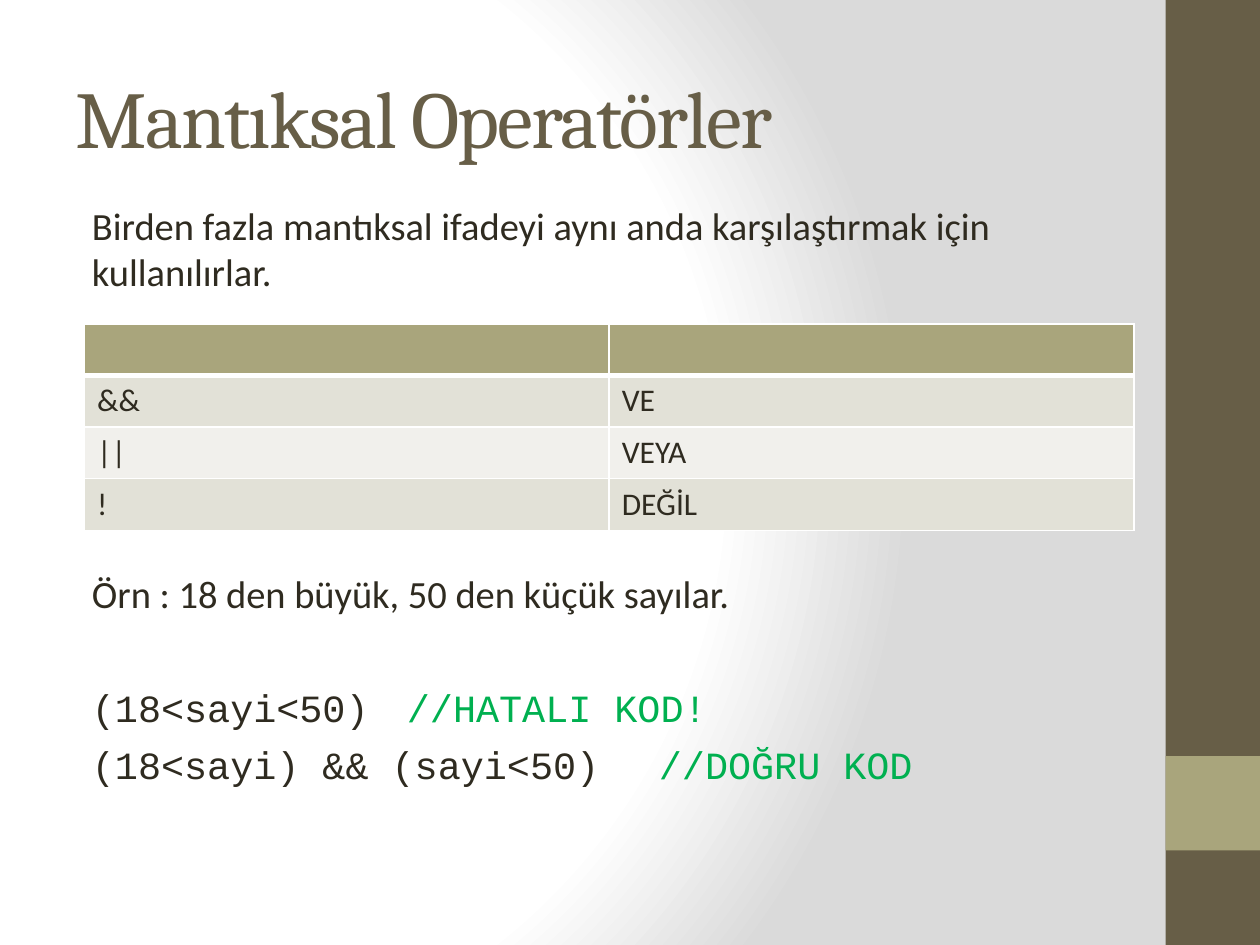
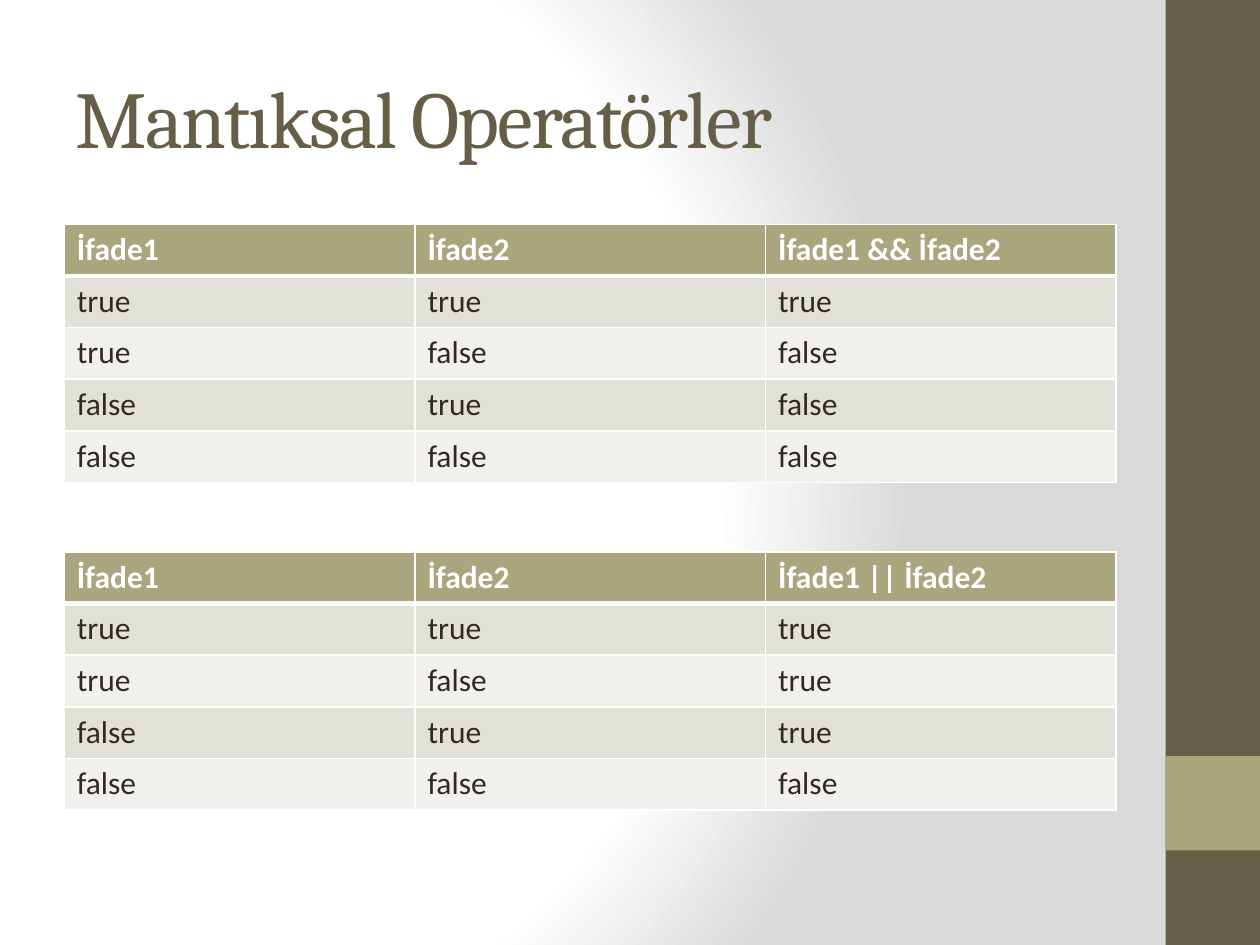
from pptx import Presentation
from pptx import util as u
from pptx.dml.color import RGBColor
from pptx.enum import shapes, text
from pptx.oxml import parse_xml
from pptx.oxml.ns import nsdecls, qn

COLORS = {
    "ink": "2F2B20", "brown": "675E47", "olive": "A9A57C", "white": "FFFFFF",
    "grey": "DADADA", "band_dark": "E2E1D7", "band_light": "F1F0EC", "comment": "00B050",
}
HEADING_FONT, BODY_FONT, CODE_FONT = "Cambria", "Calibri", "Courier New"
TITLE_ONLY, TITLE_AND_BODY = 5, 1
TITLE = "Mantıksal Operatörler"
TITLE_BOX = (0.5, 0.3, 8.33, 1.25)
BODY_BOX = (0.51, 1.55, 8.33, 5.43)
ROW_HEIGHT = 0.41

OPERATORS = [("", ""), ("&&", "VE"), ("||", "VEYA"), ("!", "DEĞİL")]
TRUTH_PAIRS = [(True, True), (True, False), (False, True), (False, False)]


def rgb(name):
    return RGBColor.from_string(COLORS[name])


def inches(box):
    return [u.Inches(length) for length in box]


def set_font(font, name, size, color, bold=False):
    font.name, font.size, font.bold = name, u.Pt(size), bold
    font.color.rgb = rgb(color)


def set_background(master):
    """Give the master a radial gradient from white to grey."""
    stops = "".join(
        f'<a:gs pos="{pos * 1000}"><a:srgbClr val="{COLORS[name]}"/></a:gs>'
        for pos, name in [(0, "white"), (75, "white"), (100, "grey")])
    background = parse_xml(
        f'<p:bg {nsdecls("p", "a")}><p:bgPr><a:gradFill rotWithShape="1">'
        f'<a:gsLst>{stops}</a:gsLst><a:path path="circle">'
        '<a:fillToRect l="20000" t="50000" r="100000" b="50000"/></a:path>'
        '</a:gradFill><a:effectLst/></p:bgPr></p:bg>')
    content = master.element.find(qn("p:cSld"))
    previous = content.find(qn("p:bg"))
    if previous is not None:
        content.remove(previous)
    content.insert(0, background)


def move_side_bands_to_master(slide, master):
    """Draw the right-hand bands on a slide, then hand them to the master."""
    bands = [((9.25, 0, 0.75, 7.5), "brown"), ((9.25, 6, 0.75, 0.75), "olive")]
    for position, (box, color) in enumerate(bands, start=2):
        band = slide.shapes.add_shape(shapes.MSO_SHAPE.RECTANGLE, *inches(box))
        band.shadow.inherit = False
        band.fill.solid()
        band.fill.fore_color.rgb = rgb(color)
        band.line.fill.background()
        master.shapes.element.insert(position, band.element)


def place(placeholder, box):
    placeholder.left, placeholder.top, placeholder.width, placeholder.height = inches(box)
    placeholder.text_frame.auto_size = text.MSO_AUTO_SIZE.NONE
    placeholder.text_frame.word_wrap = True


def add_title(slide, box):
    heading = slide.shapes.title
    place(heading, box)
    heading.text_frame.vertical_anchor = text.MSO_ANCHOR.MIDDLE
    line = heading.text_frame.paragraphs[0]
    line.text = TITLE
    line.alignment = text.PP_ALIGN.LEFT
    set_font(line.font, HEADING_FONT, 46, "brown")
    line.runs[0].font._element.set("spc", "-100")


def add_explanation(slide, box):
    """Fill the body; the second item of a line is its code comment."""
    lines = [
        ("Birden fazla mantıksal ifadeyi aynı anda karşılaştırmak için kullanılırlar.",
         "", BODY_FONT, 0),
        ("Örn : 18 den büyük, 50 den küçük sayılar.", "", BODY_FONT, 158),
        ("(18<sayi<50)", "//HATALI KOD!", CODE_FONT, 38.5),
        ("(18<sayi) && (sayi<50)", "//DOĞRU KOD", CODE_FONT, 6),
    ]
    body = slide.placeholders[1]
    place(body, box)
    frame = body.text_frame
    frame.margin_left = u.Inches(0.22)
    for index, (statement, comment, font_name, space) in enumerate(lines):
        line = frame.add_paragraph() if index else frame.paragraphs[0]
        properties = line._p.get_or_add_pPr()
        properties.set("marL", "0")
        properties.set("indent", "0")
        properties.append(parse_xml(f'<a:buNone {nsdecls("a")}/>'))
        if comment:
            properties.append(parse_xml(
                f'<a:tabLst {nsdecls("a")}><a:tab pos="{u.Inches(5)}" algn="l"/></a:tabLst>'))
        line.space_before = u.Pt(space)
        set_font(line.font, font_name, 22, "ink")
        line.add_run().text = statement
        if comment:
            remark = line.add_run()
            remark.text = "\t" + comment
            remark.font.color.rgb = rgb("comment")


def set_borders(cell, top, bottom):
    """Draw white cell edges; top and bottom are widths in points."""
    edges = [("lnL", 1), ("lnR", 1), ("lnT", top), ("lnB", bottom)]
    for position, (edge, width) in enumerate(edges):
        cell._tc.get_or_add_tcPr().insert(position, parse_xml(
            f'<a:{edge} {nsdecls("a")} w="{u.Pt(width)}"><a:solidFill>'
            f'<a:srgbClr val="{COLORS["white"]}"/></a:solidFill></a:{edge}>'))


def add_banded_table(slide, rows, left, top, width):
    box = (left, top, width, ROW_HEIGHT * len(rows))
    table = slide.shapes.add_table(len(rows), len(rows[0]), *inches(box)).table
    for row_index, values in enumerate(rows):
        is_header = row_index == 0
        fill = "olive" if is_header else ("band_light", "band_dark")[row_index % 2]
        for column, value in enumerate(values):
            cell = table.cell(row_index, column)
            cell.text = value
            cell.fill.solid()
            cell.fill.fore_color.rgb = rgb(fill)
            set_borders(cell, top=3 if row_index == 1 else 1, bottom=3 if is_header else 1)
            set_font(cell.text_frame.paragraphs[0].font, BODY_FONT, 18,
                     "white" if is_header else "ink", bold=is_header)


def truth_rows(operator, evaluate):
    header = ("İfade1", "İfade2", f"İfade1 {operator} İfade2")
    return [header] + [
        tuple(str(value).lower() for value in (first, second, evaluate(first, second)))
        for first, second in TRUTH_PAIRS]


def add_operators_slide(prs):
    slide = prs.slides.add_slide(prs.slide_layouts[TITLE_AND_BODY])
    add_title(slide, TITLE_BOX)
    add_explanation(slide, BODY_BOX)
    add_banded_table(slide, OPERATORS, 0.67, 2.57, 8.33)
    return slide


def add_truth_tables_slide(prs):
    slide = prs.slides.add_slide(prs.slide_layouts[TITLE_ONLY])
    add_title(slide, TITLE_BOX)
    add_banded_table(slide, truth_rows("&&", lambda a, b: a and b), 0.51, 1.78, 8.35)
    add_banded_table(slide, truth_rows("||", lambda a, b: a or b), 0.51, 4.38, 8.35)


def main():
    prs = Presentation()
    prs.slide_width, prs.slide_height = u.Inches(10), u.Inches(7.5)
    set_background(prs.slide_master)
    operators_slide = add_operators_slide(prs)
    move_side_bands_to_master(operators_slide, prs.slide_master)
    add_truth_tables_slide(prs)
    prs.save("out.pptx")


if __name__ == "__main__":
    main()
